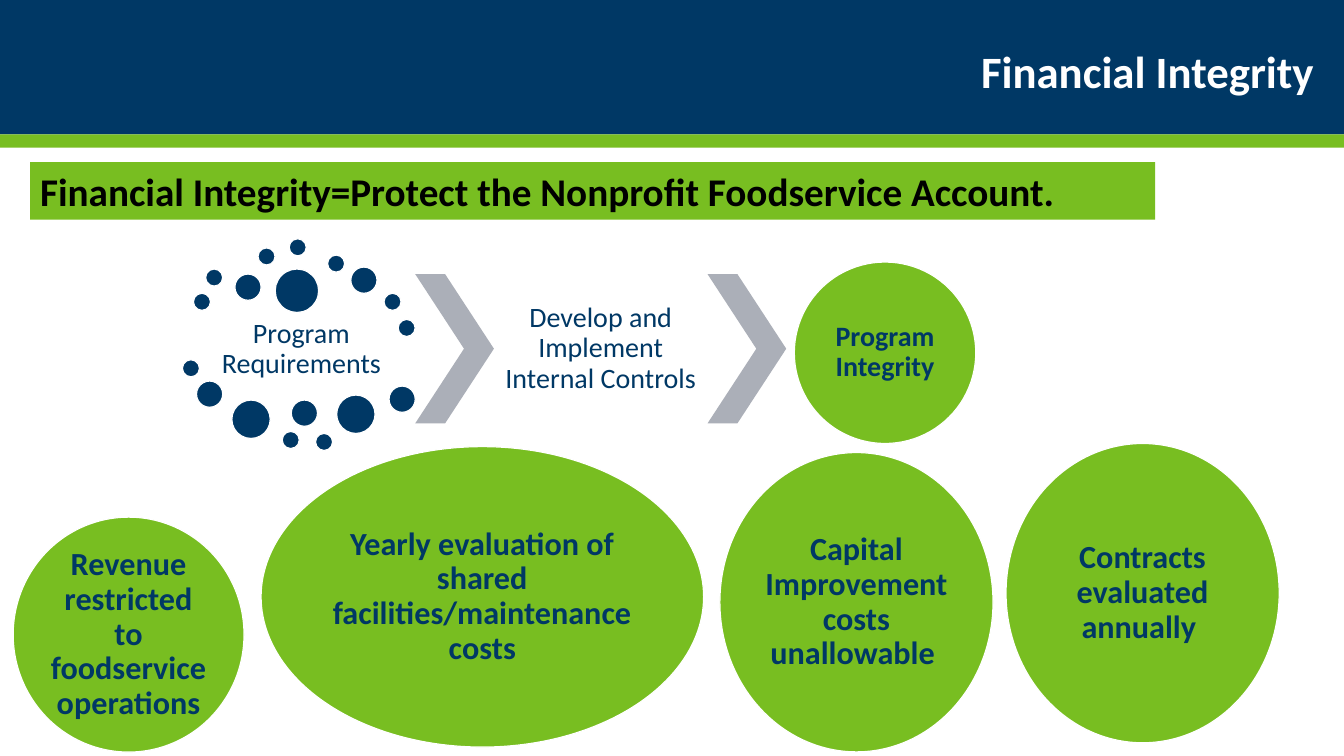
"""Build the Financial Integrity slide."""
import pptx
import pptx.dml.color
import pptx.enum.shapes
import pptx.enum.text
import pptx.util

Pt = pptx.util.Pt
SHAPE = pptx.enum.shapes.MSO_SHAPE
ALIGN = pptx.enum.text.PP_ALIGN
ANCHOR = pptx.enum.text.MSO_ANCHOR
NAVY, GREEN, GREY, WHITE, BLACK = "003865", "78BE21", "ABAFB8", "FFFFFF", "000000"

DOTS = {
    12.2: [(138.2, 209.5), (146.9, 192.2), (184.3, 177.1), (206.6, 170.6), (234, 182.2),
           (274.3, 209.5), (284.4, 228.2), (130.3, 257), (201.6, 308.2), (225.4, 309.6)],
    18.7: [(167.8, 195.8), (250.6, 190.8), (140.4, 272.2), (208.1, 285.8), (277.9, 275.8)],
    27.4: [(165.6, 285.8), (240.5, 282.2)],
    31: [(196.6, 192.2)],
}
CHECKS = [
    ("Revenue restricted to foodservice operations", (9.4, 369.4, 164.9, 167.8)),
    ("Yearly evaluation of shared facilities/maintenance costs", (186.5, 319, 316.1, 214.6)),
    ("Capital Improvement costs unallowable ", (514.2, 323.3, 195.1, 213.8)),
    ("Contracts evaluated annually ", (718.6, 316.8, 195.1, 213.8)),
]


def paint(target, colour):
    """Give a fill or a line's fill a solid colour."""
    target.solid()
    target.fore_color.rgb = pptx.dml.color.RGBColor.from_string(colour)


def write(frame, words, size, colour, bold=False, align=ALIGN.CENTER, spacing=0.9):
    """Write one formatted run into the first paragraph of a frame."""
    frame.word_wrap = True
    paragraph = frame.paragraphs[0]
    paragraph.alignment = align
    paragraph.line_spacing = spacing
    run = paragraph.add_run()
    run.text = words
    run.font.name = "Calibri"
    run.font.size = Pt(size)
    run.font.bold = bold
    paint(run.font.fill, colour)


def set_insets(frame, inset):
    """Centre a frame's text vertically with equal insets."""
    frame.vertical_anchor = ANCHOR.MIDDLE
    frame.margin_left = frame.margin_right = Pt(inset)
    frame.margin_top = frame.margin_bottom = Pt(inset)


def add_block(slide, kind, box, colour, outlined=False):
    """Add a flat preset shape."""
    block = slide.shapes.add_shape(kind, *map(Pt, box))
    block.shadow.inherit = False
    paint(block.fill, colour)
    if outlined:
        paint(block.line.fill, WHITE)
        block.line.width = Pt(0.85)
    else:
        block.line.fill.background()
    return block


def add_circle(slide, words, box, size):
    """Add a green ellipse with a bold navy label."""
    circle = add_block(slide, SHAPE.OVAL, box, GREEN, outlined=True)
    set_insets(circle.text_frame, 0)
    write(circle.text_frame, words, size, NAVY, bold=True)


def add_step(slide, words, box):
    """Add an unfilled step label of the process."""
    step = slide.shapes.add_textbox(*map(Pt, box))
    set_insets(step.text_frame, 2)
    write(step.text_frame, words, 20, NAVY)


def add_header(slide, words):
    """Place the title over a navy band with a green rule."""
    title = slide.shapes.title
    for box, colour in (((0, 0, 960, 96), NAVY), ((0, 96, 960, 9.4), GREEN)):
        title.element.addprevious(add_block(slide, SHAPE.RECTANGLE, box, colour).element)
    title.left, title.top, title.width, title.height = map(Pt, (118, 16.6, 828, 72))
    title.text_frame.auto_size = pptx.enum.text.MSO_AUTO_SIZE.NONE
    title.text_frame.vertical_anchor = ANCHOR.MIDDLE
    write(title.text_frame, words, 32, WHITE, bold=True, align=ALIGN.RIGHT)


def add_banner(slide, words):
    """Add the green key message strip."""
    banner = add_block(slide, SHAPE.RECTANGLE, (21.6, 115.9, 803.5, 41), GREEN)
    banner.text_frame.vertical_anchor = ANCHOR.TOP
    write(banner.text_frame, words, 28, BLACK, bold=True, align=ALIGN.LEFT, spacing=1)


def add_process(slide):
    """Add the flow from requirements through controls to integrity."""
    add_step(slide, "Program Requirements", (139, 224.6, 152.6, 50.4))
    for diameter, corners in DOTS.items():
        for left, top in corners:
            add_block(slide, SHAPE.OVAL, (left, top, diameter, diameter), NAVY, outlined=True)
    for left in (296.6, 505.4):
        chevron = add_block(slide, SHAPE.CHEVRON, (left, 195.8, 56.2, 106.6), GREY)
        chevron.adjustments[0] = 0.62
    add_step(slide, "Develop and Implement Internal Controls", (352.8, 195.8, 152.6, 106.6))
    add_circle(slide, "Program Integrity", (567.4, 187.2, 129.6, 129.6), 20)


def main():
    """Assemble and save the slide."""
    deck = pptx.Presentation()
    deck.slide_width, deck.slide_height = Pt(960), Pt(540)
    slide = deck.slides.add_slide(deck.slide_layouts.get_by_name("Title Only"))
    add_header(slide, "Financial Integrity")
    add_banner(slide, "Financial Integrity=Protect the Nonprofit Foodservice Account.")
    add_process(slide)
    for words, box in CHECKS:
        add_circle(slide, words, box, 23)
    deck.save("out.pptx")


if __name__ == "__main__":
    main()
